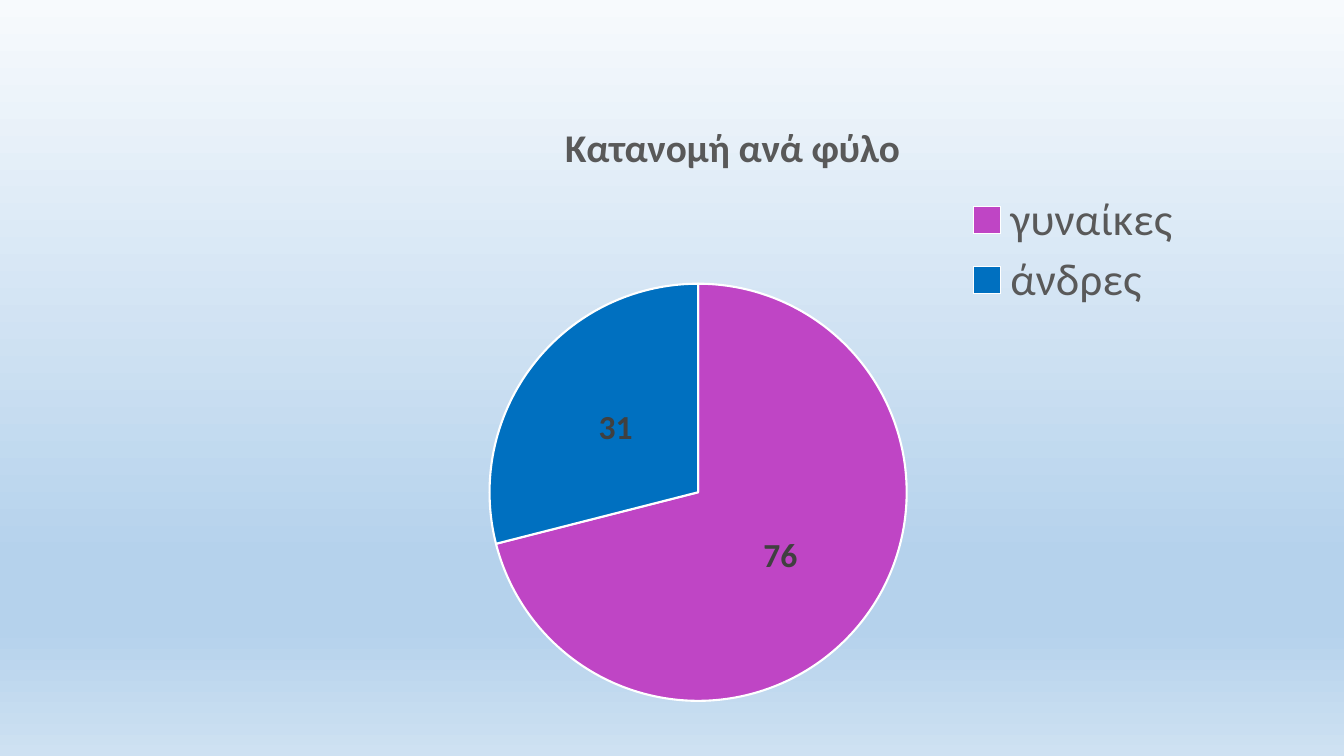
"""Build a slide with a pie chart of the distribution by gender."""
from copy import deepcopy
from dataclasses import dataclass

from pptx import Presentation
from pptx.chart.data import CategoryChartData
from pptx.dml.color import RGBColor
from pptx.enum.chart import XL_CHART_TYPE, XL_LABEL_POSITION, XL_LEGEND_POSITION
from pptx.oxml import parse_xml
from pptx.oxml.ns import nsdecls, qn
from pptx.util import Pt


@dataclass(frozen=True)
class Theme:
    font: str = "Calibri"
    title_size: int = 28
    legend_size: int = 32
    label_size: int = 24
    text: str = "595959"
    label: str = "404040"
    outline: str = "FFFFFF"
    slices: tuple = ("BF45C5", "0070C0")
    background: tuple = ((0, "F7FAFD"), (0.74, "B5D2EC"), (0.83, "B5D2EC"), (1, "CEE1F2"))


theme = Theme()


def write_text(frame, text, *, size, color, bold=False):
    span = frame.paragraphs[0].add_run()
    span.text = text
    span.font.name = theme.font
    span.font.size = Pt(size)
    span.font.bold = bold
    span.font.color.rgb = RGBColor.from_string(color)


def place(element, index, target=None, **fractions):
    for old in element.findall(qn("c:layout")):
        element.remove(old)
    inner = f'<c:layoutTarget val="{target}"/>' if target else ""
    modes = "".join(f'<c:{key}Mode val="edge"/>' for key in "xy")
    values = "".join(f'<c:{key} val="{value}"/>' for key, value in fractions.items())
    element.insert(index, parse_xml(
        f'<c:layout {nsdecls("c")}><c:manualLayout>{inner}{modes}{values}'
        "</c:manualLayout></c:layout>"))


deck = Presentation()
deck.slide_width, deck.slide_height = Pt(960), Pt(540)
page = deck.slides.add_slide(deck.slide_layouts[6])

backdrop = page.background.fill
backdrop.gradient()
backdrop.gradient_angle = 270
stop_list = page.element.find(".//" + qn("a:gsLst"))
for _ in range(len(theme.background) - len(stop_list)):
    stop_list.append(deepcopy(stop_list[0]))
for stop, (position, color) in zip(backdrop.gradient_stops, theme.background):
    stop.position = position
    stop.color.rgb = RGBColor.from_string(color)

data = CategoryChartData()
data.categories = ["γυναίκες", "άνδρες"]
data.add_series("Series 1", [76, 31])
chart = page.shapes.add_chart(
    XL_CHART_TYPE.PIE, Pt(184.3), Pt(59), Pt(669.6), Pt(443.5), data).chart
chart.font.name = theme.font

chart.has_title = True
write_text(chart.chart_title.text_frame, "Κατανομή ανά φύλο",
           size=theme.title_size, color=theme.text, bold=True)
place(chart.chart_title._element, 1, x=0.32, y=0.05)

chart.has_legend = True
legend = chart.legend
legend.position = XL_LEGEND_POSITION.RIGHT
legend.include_in_layout = False
legend.font.name = theme.font
legend.font.size = Pt(theme.legend_size)
legend.font.color.rgb = RGBColor.from_string(theme.text)
place(legend._element, 1, x=0.76, y=0.17, w=0.23, h=0.2)

pie = chart.plots[0]
pie.vary_by_categories = True
place(chart._chartSpace.chart.plotArea, 0, "inner", x=0, y=0.324, w=0.939, h=0.672)
for index, color in enumerate(theme.slices):
    style = pie.series[0].points[index].format
    style.fill.solid()
    style.fill.fore_color.rgb = RGBColor.from_string(color)
    style.line.color.rgb = RGBColor.from_string(theme.outline)
    style.line.width = Pt(1.5)

pie.has_data_labels = True
labels = pie.data_labels
labels.show_value = True
labels.show_percentage = False
labels.position = XL_LABEL_POSITION.CENTER
labels.font.name = theme.font
labels.font.size = Pt(theme.label_size)
labels.font.bold = True
labels.font.color.rgb = RGBColor.from_string(theme.label)

deck.save("out.pptx")
